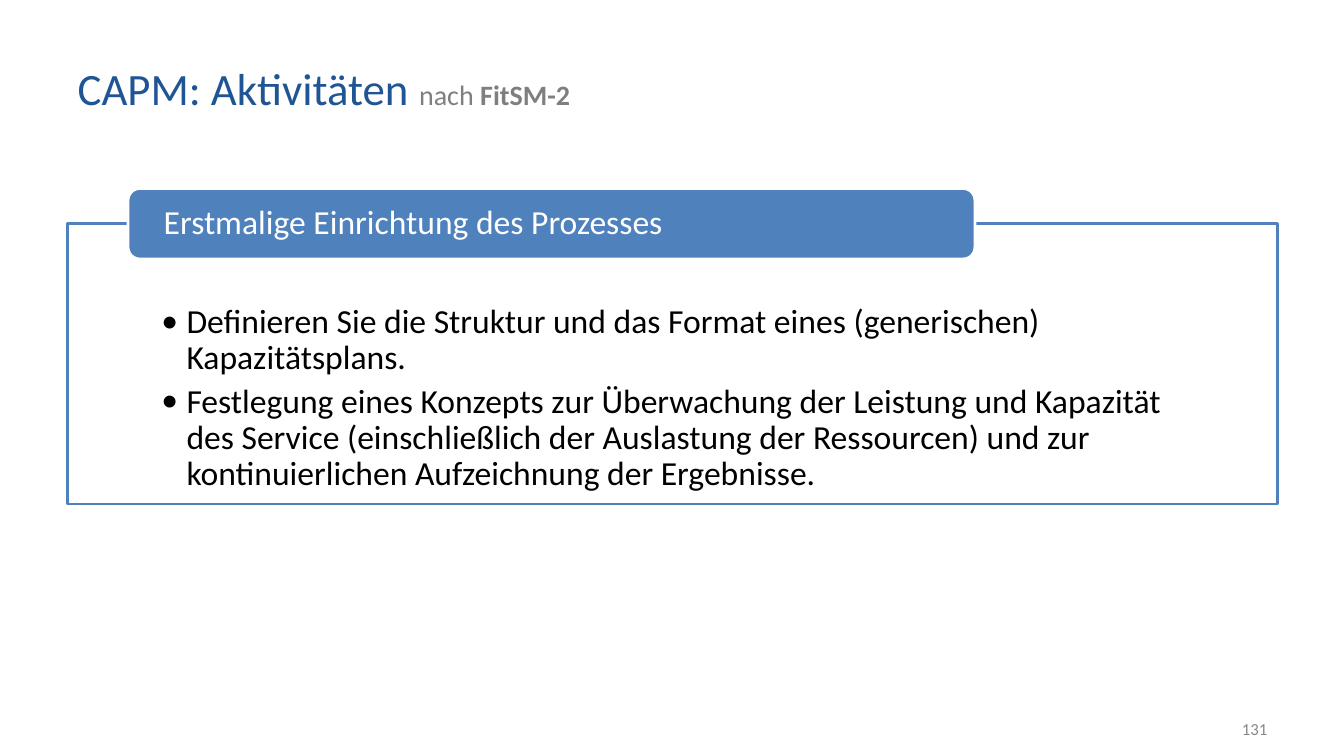
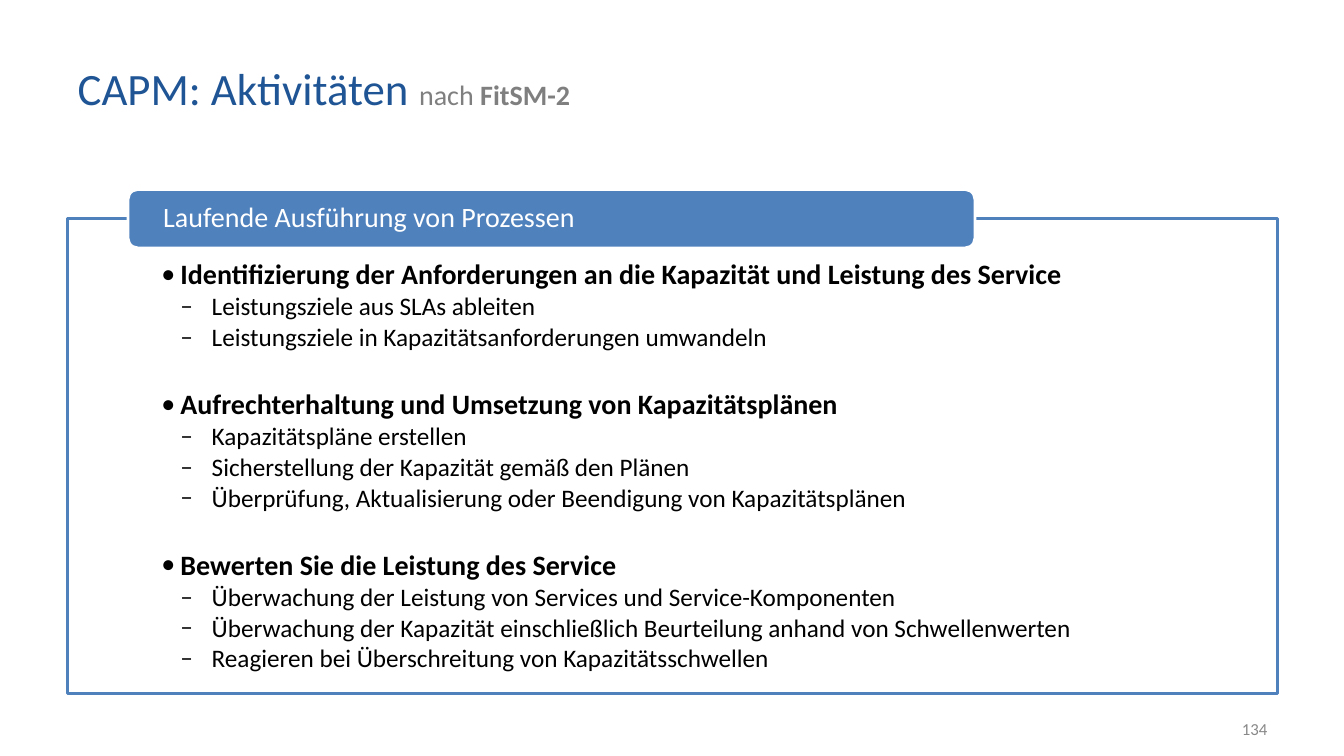
from lxml.etree import SubElement
from pptx import Presentation
from pptx.dml.color import RGBColor
from pptx.enum.shapes import MSO_SHAPE as Shape
from pptx.enum.text import MSO_ANCHOR as Anchor, MSO_AUTO_SIZE as AutoSize, PP_ALIGN as Align
from pptx.oxml.ns import qn
from pptx.util import Inches, Pt

FONT = "Calibri"
TITLE_BLUE, PANEL_BLUE = "205595", "4F81BD"
TITLE_GREY, NUMBER_GREY = "7F7F7F", "888888"
BLACK, WHITE = "000000", "FFFFFF"

TITLE_BOX = (0.67, 0.3, 9.9, 1.14)
NUMBER_BOX = (9.56, 7.03, 3.11, 0.4)
TITLE_RUNS = [
    ("CAPM: Aktivitäten ", {"size": Pt(32)}, TITLE_BLUE),
    ("nach ", {"size": Pt(20)}, TITLE_GREY),
    ("FitSM-2", {"size": Pt(20), "bold": True}, TITLE_GREY),
]

PLAIN_POINT = {"level": 0, "bullet": "•", "margin": 0.25, "hanging": 0.25,
               "before": 5.2, "font": {"size": Pt(24)}}
HEADING = {"level": 0, "bullet": "•", "margin": 0.19, "hanging": 0.19,
           "before": 27.4, "font": {"size": Pt(20), "bold": True}}
DETAIL = {"level": 1, "bullet": "–", "margin": 0.5, "hanging": 0.31,
          "before": 2.5, "font": {"size": Pt(18), "bold": False}}

SLIDES = [
    {
        "number": "131",
        "label": "Erstmalige Einrichtung des Prozesses",
        "label_size": 24,
        "label_height": 0.7,
        "panel": (0.67, 2.22, 12, 2.78),
        "insets": (0.93, 0.8, 0.93, 0.1),
        "points": [
            (PLAIN_POINT, "Definieren Sie die Struktur und das Format eines (generischen) "
                          "Kapazitätsplans."),
            (PLAIN_POINT, "Festlegung eines Konzepts zur Überwachung der Leistung und Kapazität "
                          "des Service (einschließlich der Auslastung der Ressourcen) und zur "
                          "kontinuierlichen Aufzeichnung der Ergebnisse."),
        ],
    },
    {
        "number": "134",
        "label": "Laufende Ausführung von Prozessen",
        "label_size": 20,
        "label_height": 0.58,
        "panel": (0.67, 2.17, 12, 4.71),
        "insets": (0.93, 0.41, 0.93, 0.14),
        "points": [
            (HEADING, "Identifizierung der Anforderungen an die Kapazität und Leistung des Service"),
            (DETAIL, "Leistungsziele aus SLAs ableiten"),
            (DETAIL, "Leistungsziele in Kapazitätsanforderungen umwandeln"),
            (HEADING, "Aufrechterhaltung und Umsetzung von Kapazitätsplänen"),
            (DETAIL, "Kapazitätspläne erstellen"),
            (DETAIL, "Sicherstellung der Kapazität gemäß den Plänen"),
            (DETAIL, "Überprüfung, Aktualisierung oder Beendigung von Kapazitätsplänen"),
            (HEADING, "Bewerten Sie die Leistung des Service"),
            (DETAIL, "Überwachung der Leistung von Services und Service-Komponenten"),
            (DETAIL, "Überwachung der Kapazität einschließlich Beurteilung anhand von Schwellenwerten"),
            (DETAIL, "Reagieren bei Überschreitung von Kapazitätsschwellen"),
        ],
    },
]


def color(hex_value):
    """Turn a hex string into a colour."""
    return RGBColor.from_string(hex_value)


def apply_format(target, values):
    """Set every attribute named in a dict."""
    for name, value in values.items():
        setattr(target, name, value)


def place(shape, box):
    """Move and size a shape to a box in inches."""
    apply_format(shape, dict(zip(("left", "top", "width", "height"), map(Inches, box))))


def paint(shape, fill, line):
    """Give a shape a solid fill and a two-point outline."""
    shape.fill.solid()
    shape.fill.fore_color.rgb = color(fill)
    shape.line.color.rgb = color(line)
    shape.line.width = Pt(2)


def set_frame(shape, anchor, insets=(0.1, 0.05, 0.1, 0.05)):
    """Set wrapping, anchor and insets of a text frame and return it."""
    frame = shape.text_frame
    sides = ("margin_left", "margin_top", "margin_right", "margin_bottom")
    apply_format(frame, {"word_wrap": True, "auto_size": AutoSize.NONE,
                         "vertical_anchor": anchor,
                         **dict(zip(sides, map(Inches, insets)))})
    return frame


def add_run(paragraph, text, values, hex_value):
    """Append a formatted run to a paragraph."""
    run = paragraph.add_run()
    run.text = text
    apply_format(run.font, {"name": FONT, **values})
    run.font.color.rgb = color(hex_value)


def add_bullet(paragraph, style):
    """Give a paragraph a black bullet with a hanging indent."""
    properties = paragraph._p.get_or_add_pPr()
    properties.set("marL", str(Inches(style["margin"])))
    properties.set("indent", str(-Inches(style["hanging"])))
    bullet_color = SubElement(properties, qn("a:buClr"))
    SubElement(bullet_color, qn("a:srgbClr"), val=BLACK)
    SubElement(properties, qn("a:buFont"), typeface=FONT)
    SubElement(properties, qn("a:buChar"), char=style["bullet"])


def fill_title(slide, box):
    """Place and write the shared slide title."""
    title = slide.shapes.title
    place(title, box)
    paragraph = set_frame(title, Anchor.MIDDLE).paragraphs[0]
    paragraph.alignment = Align.LEFT
    for text, values, hex_value in TITLE_RUNS:
        add_run(paragraph, text, values, hex_value)


def fill_panel(slide, box, insets, points):
    """Place the outlined list panel and write its points."""
    panel = slide.placeholders[1]
    place(panel, box)
    paint(panel, WHITE, PANEL_BLUE)
    frame = set_frame(panel, Anchor.TOP, insets)
    for index, (style, text) in enumerate(points):
        paragraph = frame.add_paragraph() if index else frame.paragraphs[0]
        add_bullet(paragraph, style)
        apply_format(paragraph, {"level": style["level"], "line_spacing": 0.9,
                                 "space_before": Pt(style["before"] if index else 0)})
        add_run(paragraph, text, style["font"], BLACK)


def add_label(slide, panel_box, height, text, size):
    """Add the rounded label that straddles the top edge of the panel."""
    left, top, width, _ = panel_box
    label = slide.shapes.add_shape(Shape.ROUNDED_RECTANGLE, 0, 0, 0, 0)
    place(label, (left + width * 0.05, top - height / 2, width * 0.7, height))
    label.shadow.inherit = False
    paint(label, PANEL_BLUE, WHITE)
    paragraph = set_frame(label, Anchor.MIDDLE, (0.32, 0, 0.32, 0)).paragraphs[0]
    apply_format(paragraph, {"alignment": Align.LEFT, "line_spacing": 0.9})
    add_run(paragraph, text, {"size": Pt(size)}, WHITE)


def add_number(slide, box, number):
    """Add the slide number at the bottom right."""
    text_box = slide.shapes.add_textbox(*map(Inches, box))
    paragraph = set_frame(text_box, Anchor.MIDDLE).paragraphs[0]
    paragraph.alignment = Align.RIGHT
    add_run(paragraph, number, {"size": Pt(12)}, NUMBER_GREY)


def add_activity_slide(presentation, content):
    """Add one slide with title, labelled panel and number."""
    slide = presentation.slides.add_slide(presentation.slide_layouts[1])
    fill_title(slide, TITLE_BOX)
    fill_panel(slide, content["panel"], content["insets"], content["points"])
    add_label(slide, content["panel"], content["label_height"],
              content["label"], content["label_size"])
    add_number(slide, NUMBER_BOX, content["number"])


def main():
    """Build and save the presentation."""
    presentation = Presentation()
    apply_format(presentation, {"slide_width": Inches(13.33), "slide_height": Inches(7.5)})
    for content in SLIDES:
        add_activity_slide(presentation, content)
    presentation.save("out.pptx")


if __name__ == "__main__":
    main()
